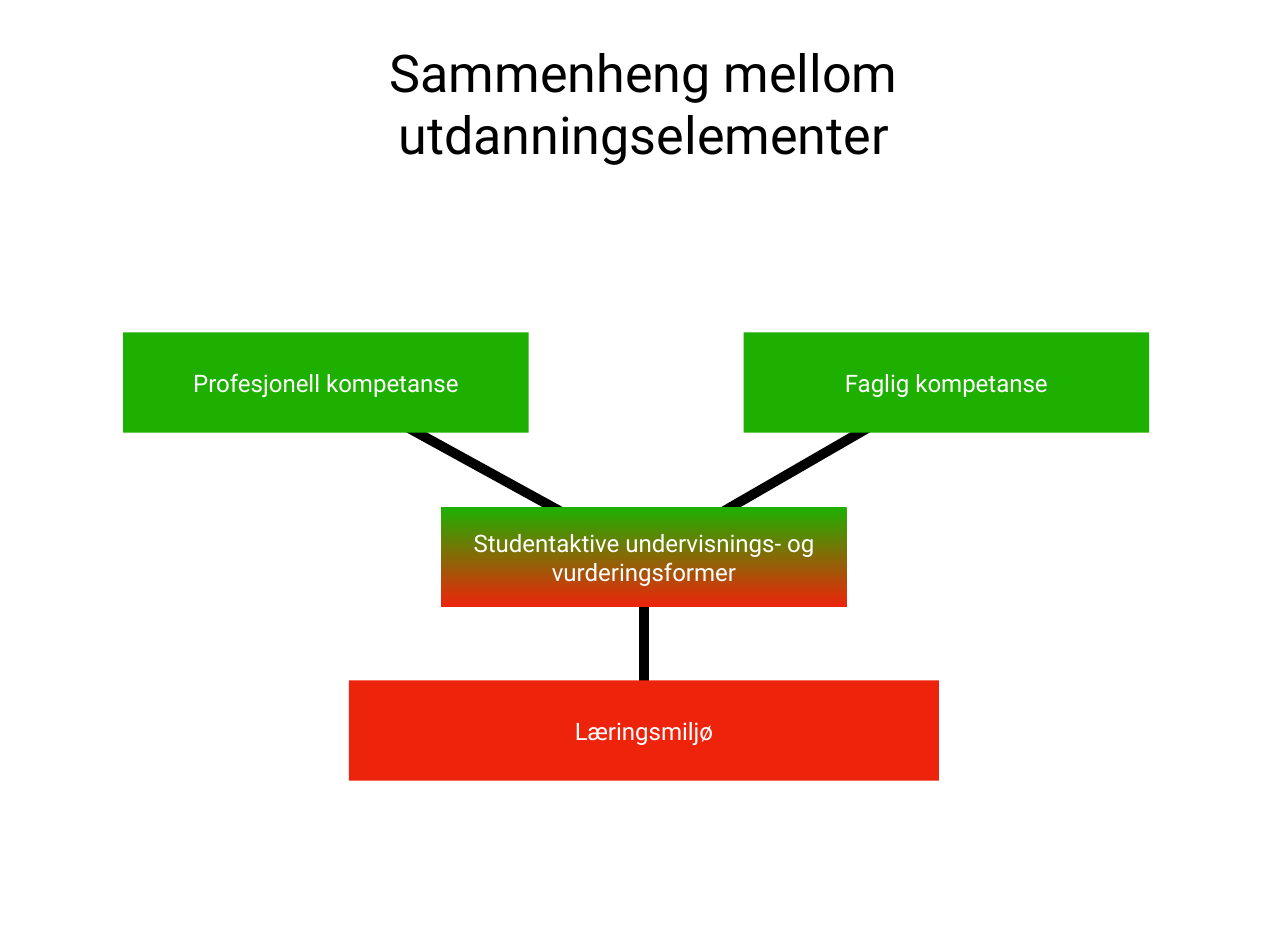
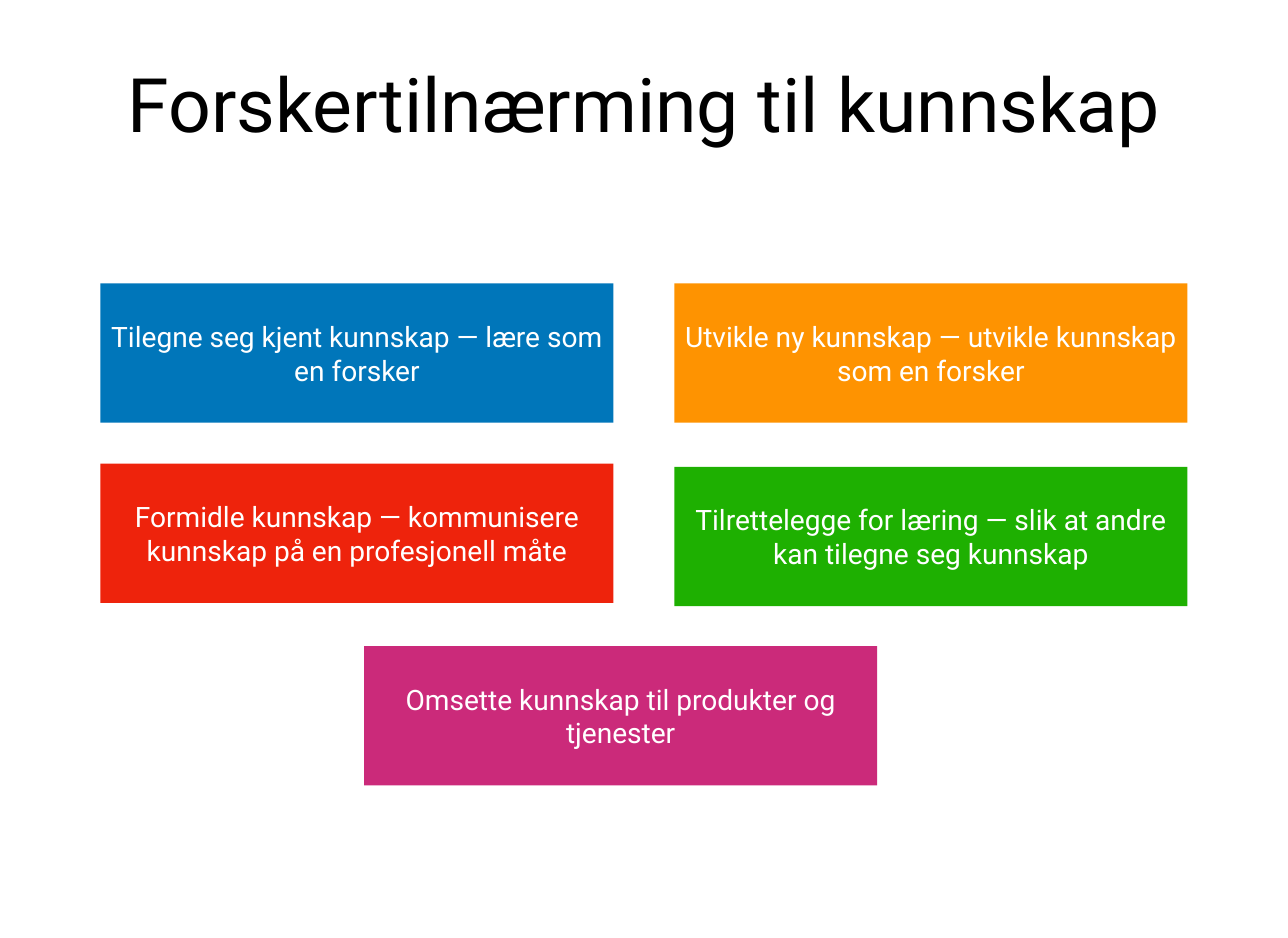
from dataclasses import dataclass

from lxml import etree
from pptx import Presentation
from pptx import util as u
from pptx.dml.color import RGBColor
from pptx.enum import shapes, text
from pptx.oxml import ns

FONT = "Roboto"
COLOURS = {
    "black": "000000",
    "white": "FFFFFF",
    "green": "1EB001",
    "red": "EE230C",
    "blue": "0076BA",
    "orange": "FE9301",
    "pink": "CB2A7A",
}
TITLE_ONLY = 5


@dataclass(frozen=True)
class BoxStyle:
    """Format shared by the boxes of one slide; lengths in cm."""
    height: float
    size: float
    inset: float


@dataclass(frozen=True)
class Box:
    """A filled box; two colours give a gradient from top to bottom."""
    label: str
    left: float
    top: float
    width: float
    colours: tuple[str, ...]

    def centre(self, style: BoxStyle) -> tuple[u.Cm, u.Cm]:
        return u.Cm(self.left + self.width / 2), u.Cm(self.top + style.height / 2)


@dataclass(frozen=True)
class Link:
    """A line between two box centres, with arrowheads at the named ends."""
    start: Box
    end: Box
    arrows: tuple[str, ...]


# Slide 1: boxes and the links between them
DIAGRAM_STYLE = BoxStyle(height=2.18, size=14.8, inset=0.05)
ENVIRONMENT = Box("Læringsmiljø", 7.57, 14.76, 12.8, ("red",))
PROFESSIONAL = Box("Profesjonell kompetanse", 2.67, 7.21, 8.8, ("green",))
ACADEMIC = Box("Faglig kompetanse", 16.13, 7.21, 8.8, ("green",))
TEACHING = Box("Studentaktive undervisnings- og vurderingsformer",
               9.57, 11, 8.8, ("green", "red"))
DIAGRAM = [ENVIRONMENT, PROFESSIONAL, ACADEMIC, TEACHING]
LINKS = [
    Link(TEACHING, ENVIRONMENT, ("headEnd", "tailEnd")),
    Link(TEACHING, PROFESSIONAL, ("tailEnd",)),
    Link(ACADEMIC, TEACHING, ("headEnd",)),
]

# Slide 2: two columns and a closing box
CARD_STYLE = BoxStyle(height=3.02, size=17.3, inset=0)
LEFT, RIGHT, CARD_WIDTH = 2.18, 14.63, 11.13
CARDS = [
    Box("Tilegne seg kjent kunnskap — lære som en forsker",
        LEFT, 6.15, CARD_WIDTH, ("blue",)),
    Box("Tilrettelegge for læring — slik at andre kan tilegne seg kunnskap",
        RIGHT, 10.13, CARD_WIDTH, ("green",)),
    Box("Formidle kunnskap — kommunisere kunnskap på en profesjonell måte",
        LEFT, 10.06, CARD_WIDTH, ("red",)),
    Box("Utvikle ny kunnskap — utvikle kunnskap som en forsker",
        RIGHT, 6.15, CARD_WIDTH, ("orange",)),
    Box("Omsette kunnskap til produkter og tjenester",
        7.9, 14.02, CARD_WIDTH, ("pink",)),
]


def rgb(name: str) -> RGBColor:
    return RGBColor.from_string(COLOURS[name])


def set_attributes(target, values: dict) -> None:
    for name, value in values.items():
        setattr(target, name, value)


def write_text(shape, content: str, size: float, colour: str, inset: float) -> None:
    """Fill a shape with centred text, one paragraph per line of content."""
    frame = shape.text_frame
    frame.text = content
    margins = {f"margin_{side}": u.Cm(inset)
               for side in ("left", "top", "right", "bottom")}
    set_attributes(frame, margins | {
        "word_wrap": True,
        "auto_size": text.MSO_AUTO_SIZE.NONE,
        "vertical_anchor": text.MSO_ANCHOR.MIDDLE,
    })
    for paragraph in frame.paragraphs:
        paragraph.alignment = text.PP_ALIGN.CENTER
        set_attributes(paragraph.font, {"name": FONT, "size": u.Pt(size)})
        paragraph.font.color.rgb = rgb(colour)


def add_titled_slide(presentation, title: str, size: float):
    slide = presentation.slides.add_slide(presentation.slide_layouts[TITLE_ONLY])
    shape = slide.shapes.title
    set_attributes(shape, {"left": u.Cm(1.93), "top": u.Cm(0.53),
                           "width": u.Cm(24.08), "height": u.Cm(3.4)})
    write_text(shape, title, size, "black", inset=0.15)
    return slide


def draw_box(slide, box: Box, style: BoxStyle) -> None:
    shape = slide.shapes.add_shape(
        shapes.MSO_SHAPE.RECTANGLE, u.Cm(box.left), u.Cm(box.top),
        u.Cm(box.width), u.Cm(style.height))
    shape.shadow.inherit = False
    shape.line.fill.background()
    if len(box.colours) == 1:
        shape.fill.solid()
        shape.fill.fore_color.rgb = rgb(box.colours[0])
    else:
        shape.fill.gradient()
        shape.fill.gradient_angle = 270
        for stop, colour, position in zip(shape.fill.gradient_stops, box.colours, (0, 1)):
            stop.color.rgb = rgb(colour)
            stop.position = position
    write_text(shape, box.label, style.size, "white", style.inset)


def draw_link(slide, link: Link, style: BoxStyle) -> None:
    connector = slide.shapes.add_connector(
        shapes.MSO_CONNECTOR.STRAIGHT,
        *link.start.centre(style), *link.end.centre(style))
    connector.line.width = u.Pt(6)
    connector.line.color.rgb = rgb("black")
    line = connector.line._get_or_add_ln()
    for arrow in link.arrows:
        etree.SubElement(line, ns.qn(f"a:{arrow}"), type="triangle")
    etree.SubElement(connector._element.spPr, ns.qn("a:effectLst"))


def main() -> None:
    presentation = Presentation()
    set_attributes(presentation, {"slide_width": u.Cm(27.94),
                                  "slide_height": u.Cm(20.35)})

    # Slide 1: links lie behind the boxes
    slide = add_titled_slide(
        presentation, "Sammenheng mellom\nutdanningselementer", 32)
    for link in LINKS:
        draw_link(slide, link, DIAGRAM_STYLE)
    for box in DIAGRAM:
        draw_box(slide, box, DIAGRAM_STYLE)

    # Slide 2
    slide = add_titled_slide(presentation, "Forskertilnærming til kunnskap", 46.2)
    for box in CARDS:
        draw_box(slide, box, CARD_STYLE)

    presentation.save("out.pptx")


if __name__ == "__main__":
    main()
